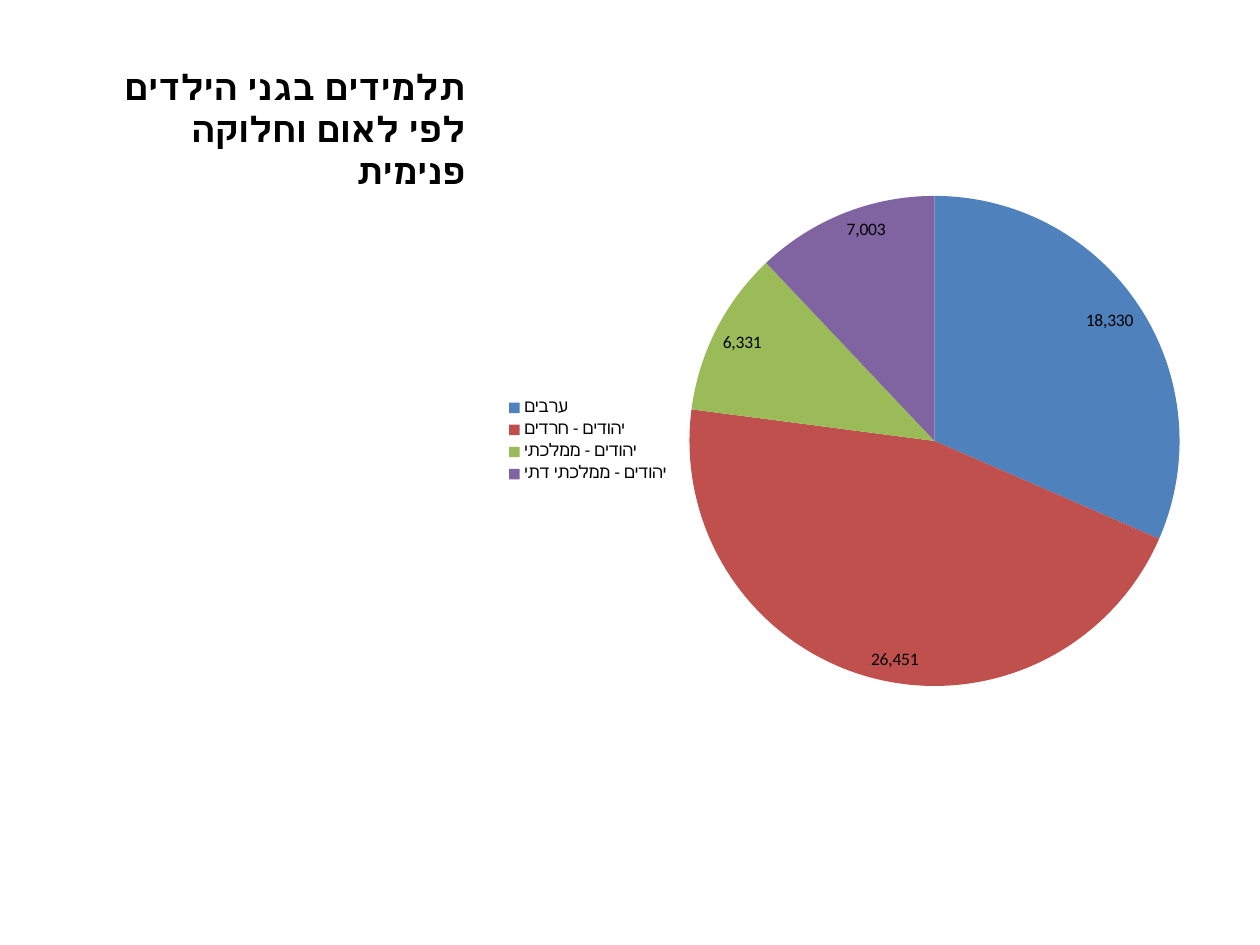
from pptx import Presentation
from pptx import util as u
from pptx.chart import data
from pptx.dml import color
from pptx.enum import chart as charts, text

PX = u.Inches(1) // 126
FONT = "Calibri"
COLORS = {
    "text": "000000",
    "arabs": "4F81BD",
    "haredi": "C0504D",
    "state": "9BBB59",
    "religious": "8064A2",
}
PUPILS = [
    ("ערבים", 18330, "arabs"),
    ("יהודים - חרדים", 26451, "haredi"),
    ("יהודים - ממלכתי", 6331, "state"),
    ("יהודים - ממלכתי דתי", 7003, "religious"),
]


def rgb(name):
    return color.RGBColor.from_string(COLORS[name])


def style_font(font, size, bold=False):
    font.name = FONT
    font.size = u.Pt(size)
    font.bold = bold
    font.color.rgb = rgb("text")


def add_title(slide, box, wording):
    frame = slide.shapes.add_textbox(*(side * PX for side in box)).text_frame
    frame.word_wrap = True
    frame.vertical_anchor = text.MSO_ANCHOR.BOTTOM
    paragraph = frame.paragraphs[0]
    paragraph.text = wording
    paragraph.alignment = text.PP_ALIGN.RIGHT
    paragraph._p.get_or_add_pPr().set("rtl", "1")
    style_font(paragraph.font, 20, bold=True)


def add_pie(slide, box, rows):
    chart_data = data.CategoryChartData(number_format="#,##0")
    chart_data.categories = [name for name, _, _ in rows]
    chart_data.add_series("Series 1", [count for _, count, _ in rows])
    chart = slide.shapes.add_chart(
        charts.XL_CHART_TYPE.PIE, *(side * PX for side in box), chart_data
    ).chart
    style_font(chart.font, 10)
    chart.has_title = False
    chart.has_legend = True
    chart.legend.position = charts.XL_LEGEND_POSITION.LEFT
    chart.legend.include_in_layout = False

    plot = chart.plots[0]
    plot.vary_by_categories = True
    for index, (_, _, name) in enumerate(rows):
        fill = plot.series[0].points[index].format.fill
        fill.solid()
        fill.fore_color.rgb = rgb(name)

    plot.has_data_labels = True
    labels = plot.data_labels
    labels.show_value = True
    labels.show_percentage = False
    labels.number_format = "#,##0"
    labels.number_format_is_linked = False
    labels.position = charts.XL_LABEL_POSITION.INSIDE_END
    style_font(labels.font, 10)


def main():
    presentation = Presentation()
    presentation.slide_width = 1260 * PX
    presentation.slide_height = 945 * PX
    slide = presentation.slides.add_slide(presentation.slide_layouts[6])
    add_title(slide, (63, 38, 415, 160), "תלמידים בגני הילדים לפי לאום וחלוקה פנימית")
    add_pie(slide, (493, 38, 704, 806), PUPILS)
    presentation.save("out.pptx")


if __name__ == "__main__":
    main()
